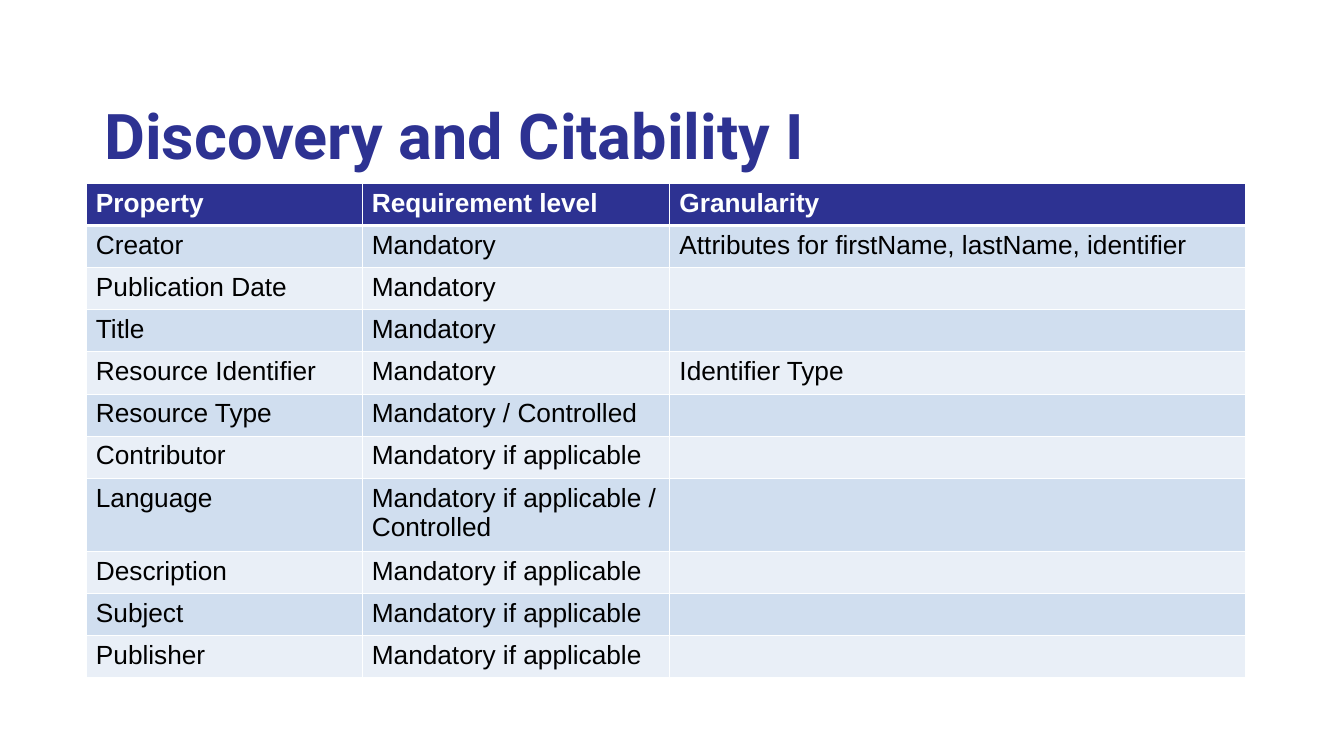
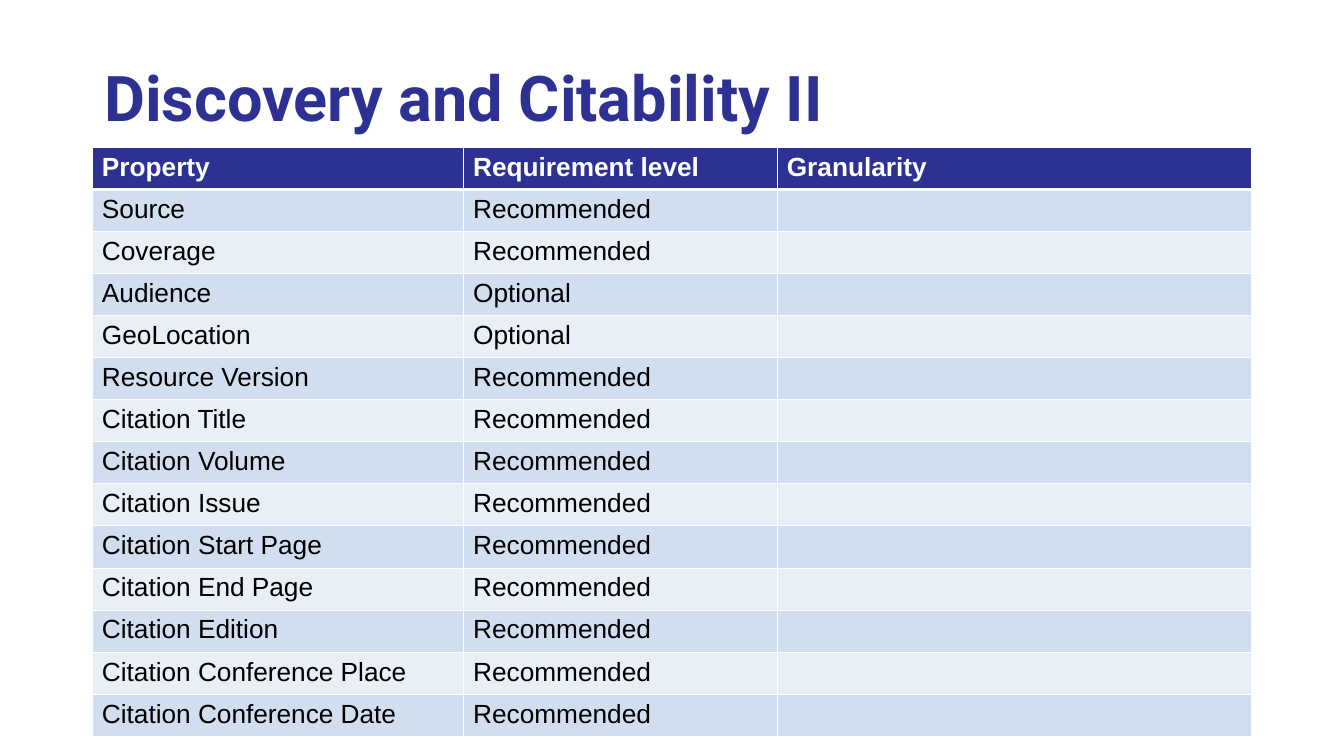
"""Build two slides of metadata property tables."""
from dataclasses import dataclass

from lxml import etree
from pptx import Presentation
from pptx import util as u
from pptx.dml.color import RGBColor
from pptx.enum import text as t
from pptx.oxml.ns import qn


@dataclass(frozen=True)
class Theme:
    """Colours, fonts, type sizes and line widths."""
    brand: str = "2D3292"
    light: str = "FEFFFF"
    ink: str = "000000"
    bands: tuple = ("D0DEEF", "E9EFF7")
    title_font: str = "Roboto"
    table_font: str = "Arial"
    title_size: int = 60
    table_size: int = 25
    thin: int = 1
    thick: int = 3


HEADER = ("Property", "Requirement level", "Granularity")
APPLICABLE = "Mandatory if applicable"

CITABILITY_ONE = [
    ("Creator", "Mandatory", "Attributes for firstName, lastName, identifier"),
    ("Publication Date", "Mandatory", ""),
    ("Title", "Mandatory", ""),
    ("Resource Identifier", "Mandatory", "Identifier Type"),
    ("Resource Type", "Mandatory / Controlled", ""),
    ("Contributor", APPLICABLE, ""),
    ("Language", f"{APPLICABLE} / Controlled", ""),
    ("Description", APPLICABLE, ""),
    ("Subject", APPLICABLE, ""),
    ("Publisher", APPLICABLE, ""),
]

OPTIONAL = ("Audience", "GeoLocation")
CITABILITY_TWO = [
    (name, "Optional" if name in OPTIONAL else "Recommended", "")
    for name in (
        "Source", "Coverage", *OPTIONAL, "Resource Version",
        "Citation Title", "Citation Volume", "Citation Issue",
        "Citation Start Page", "Citation End Page", "Citation Edition",
        "Citation Conference Place", "Citation Conference Date",
    )
]


def write(frame, text, *, font, size, color, bold=False):
    """Put one formatted run into the first paragraph of a text frame."""
    run = frame.paragraphs[0].add_run()
    run.text = text
    run.font.name = font
    run.font.size = u.Pt(size)
    run.font.bold = bold
    run.font.color.rgb = RGBColor.from_string(color)


def set_borders(cell, color, **widths):
    """Draw cell borders, given as side letters with widths in points."""
    properties = cell._tc.get_or_add_tcPr()
    for side, width in widths.items():
        line = etree.SubElement(properties, qn(f"a:ln{side}"), w=str(u.Pt(width)))
        fill = etree.SubElement(line, qn("a:solidFill"))
        etree.SubElement(fill, qn("a:srgbClr"), val=color)


class Deck:
    """Hold the style and current slide; lengths are percent of the slide."""

    TITLE_LEFT, TITLE_WIDTH, TITLE_HEIGHT = 7.76, 86, 22.3
    ROW_HEIGHT = 5.4
    MARGIN_X, MARGIN_Y = 0.73, 0.7

    def __init__(self, theme):
        """Start an empty widescreen presentation."""
        self.theme = theme
        self.presentation = Presentation()
        self.presentation.slide_width = u.Inches(17.78)
        self.presentation.slide_height = u.Inches(10)
        self.slide = None

    def x(self, share):
        """Turn a percentage of the slide width into a length."""
        return round(self.presentation.slide_width * share / 100)

    def y(self, share):
        """Turn a percentage of the slide height into a length."""
        return round(self.presentation.slide_height * share / 100)

    def add_slide(self):
        """Make a new blank slide the current one."""
        self.slide = self.presentation.slides.add_slide(
            self.presentation.slide_layouts[6])

    def add_title(self, title, top):
        """Add the slide title."""
        frame = self.slide.shapes.add_textbox(
            self.x(self.TITLE_LEFT), self.y(top),
            self.x(self.TITLE_WIDTH), self.y(self.TITLE_HEIGHT)).text_frame
        frame.word_wrap = True
        frame.vertical_anchor = t.MSO_ANCHOR.MIDDLE
        frame.margin_left = frame.margin_right = 0
        frame.margin_top = frame.margin_bottom = 0
        write(frame, title, font=self.theme.title_font,
              size=self.theme.title_size, color=self.theme.brand, bold=True)

    def add_table(self, rows, left, top, columns):
        """Add a table with the shared header and banded rows."""
        lines = [HEADER, *rows]
        table = self.slide.shapes.add_table(
            len(lines), len(columns), self.x(left), self.y(top),
            self.x(sum(columns)), self.y(self.ROW_HEIGHT * len(lines))).table
        table.horz_banding = False
        for column, width in zip(table.columns, columns):
            column.width = self.x(width)
        for index, (row, line) in enumerate(zip(table.rows, lines)):
            row.height = self.y(self.ROW_HEIGHT)
            for cell, content in zip(row.cells, line):
                self.fill_cell(cell, content, index)

    def fill_cell(self, cell, content, index):
        """Style a cell by its row index and write its content."""
        theme = self.theme
        header = index == 0
        cell.margin_left = cell.margin_right = self.x(self.MARGIN_X)
        cell.margin_top = cell.margin_bottom = self.y(self.MARGIN_Y)
        set_borders(cell, theme.light, L=theme.thin, R=theme.thin,
                    T=theme.thick if index == 1 else theme.thin,
                    B=theme.thick if header else theme.thin)
        cell.fill.solid()
        cell.fill.fore_color.rgb = RGBColor.from_string(
            theme.brand if header else theme.bands[(index - 1) % 2])
        if content:
            write(cell.text_frame, content, font=theme.table_font,
                  size=theme.table_size, bold=header,
                  color=theme.light if header else theme.ink)


def main():
    """Build and save the presentation."""
    deck = Deck(Theme())

    deck.add_slide()
    deck.add_title("Discovery and Citability I", top=6.6)
    deck.add_table(CITABILITY_ONE, left=6.41, top=24.3,
                   columns=(20.53, 22.89, 42.86))

    deck.add_slide()
    deck.add_title("Discovery and Citability II", top=1.6)
    deck.add_table(CITABILITY_TWO, left=6.86, top=19.5,
                   columns=(27.62, 23.34, 35.32))

    deck.presentation.save("out.pptx")


if __name__ == "__main__":
    main()
